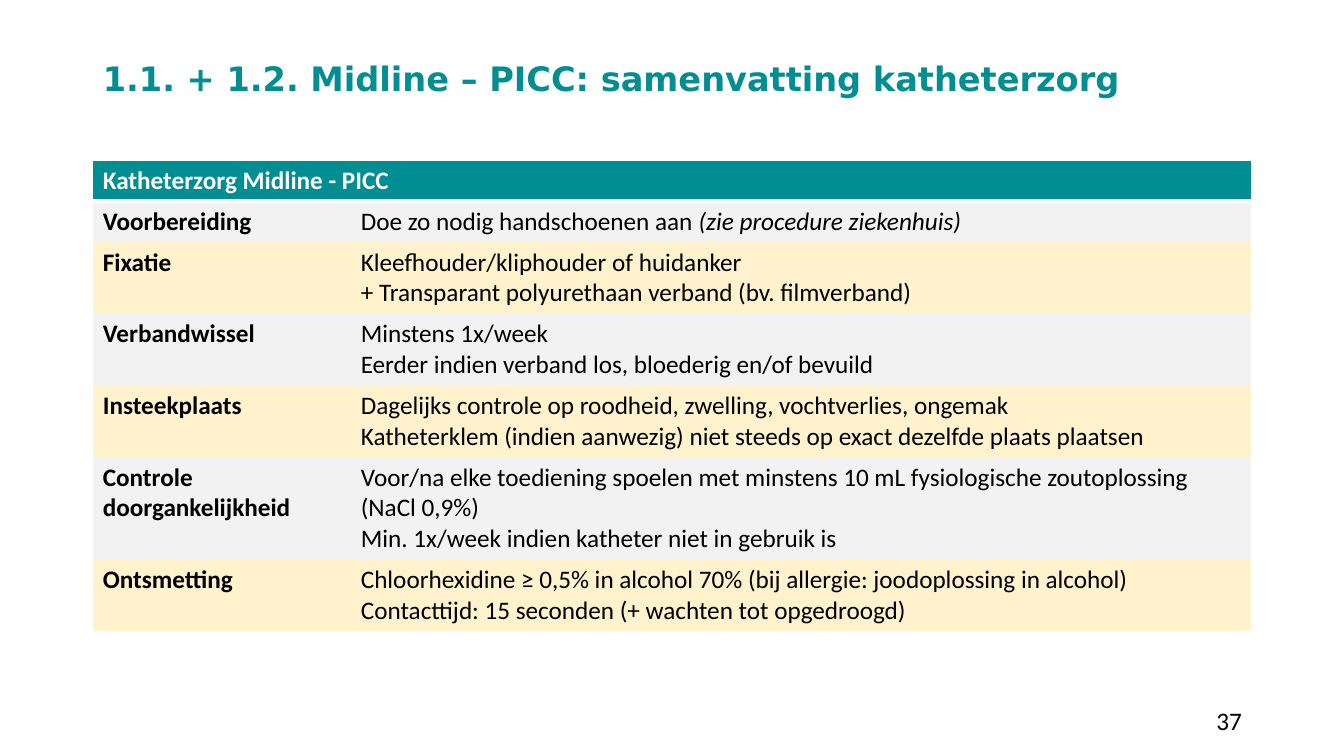
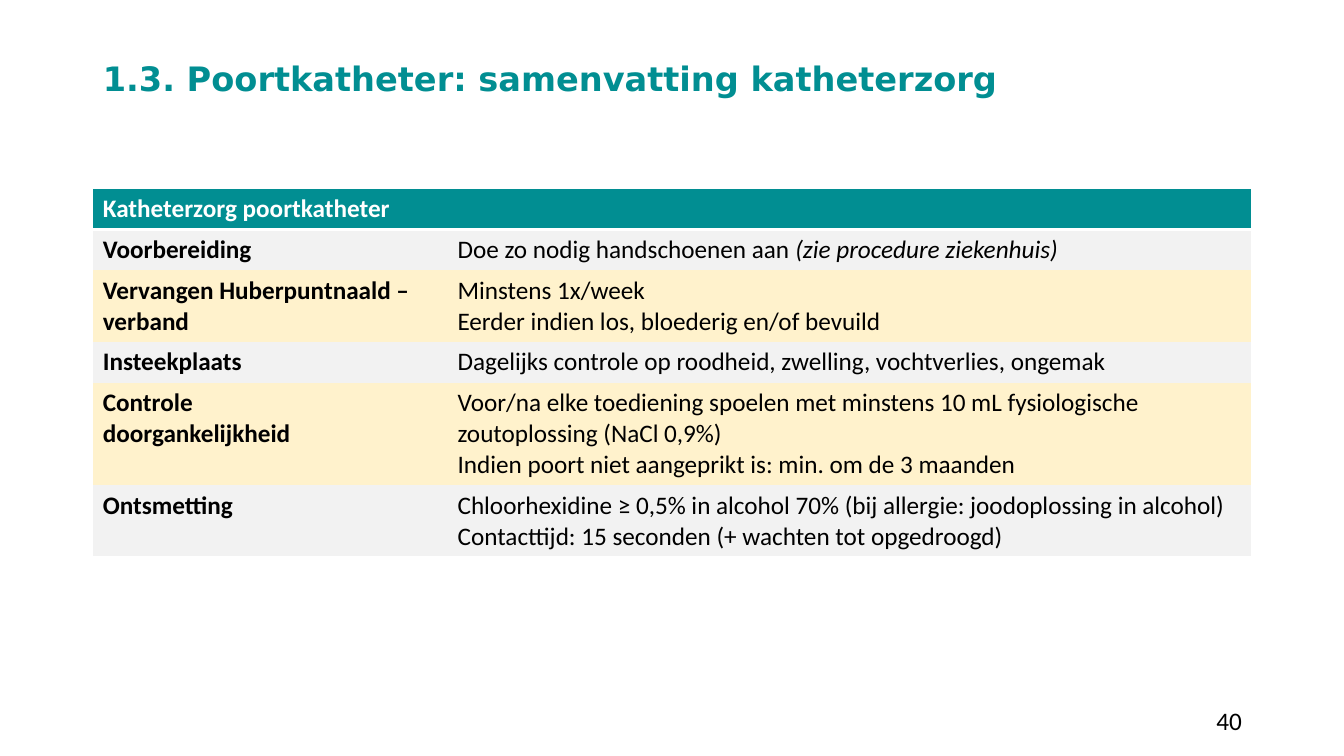
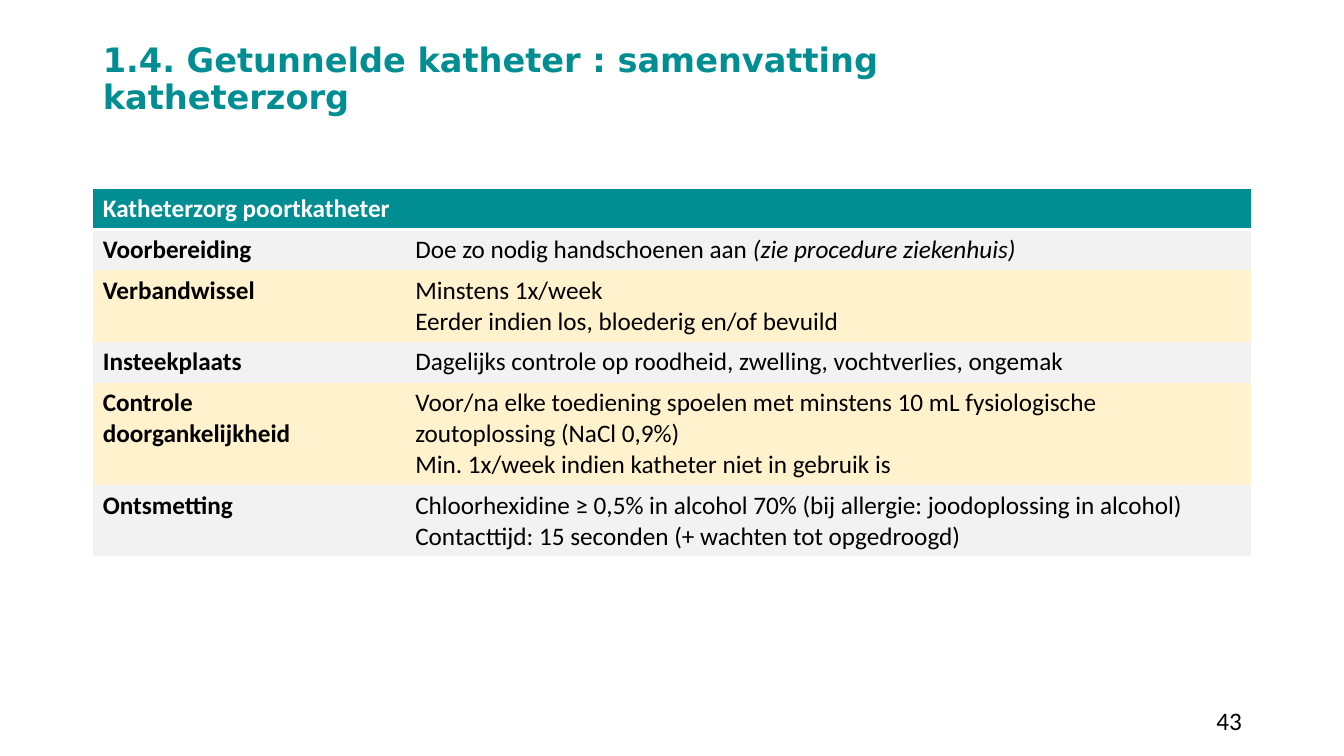
from dataclasses import dataclass
from typing import NamedTuple

from lxml.etree import SubElement
from pptx import Presentation
from pptx.dml.color import RGBColor
from pptx.enum.text import MSO_ANCHOR as Anchor, MSO_AUTO_SIZE as AutoSize, PP_ALIGN as Align
from pptx.oxml.ns import qn
from pptx.util import Pt


@dataclass(frozen=True)
class Theme:
    teal: str = "018E92"
    grey: str = "F2F2F2"
    cream: str = "FFF2CC"
    white: str = "FFFFFF"
    black: str = "000000"
    title_font: str = "DejaVu Sans"
    body_font: str = "Calibri"
    title_size: float = 24
    body_size: float = 18
    line_height: float = 22
    row_padding: float = 7.2
    thin_line: float = 1
    thick_line: float = 3
    left: float = 66.24
    table_width: float = 828
    plain_table: str = "{2D5ABB26-0587-4C30-8999-92F81FD0307C}"


THEME = Theme()


class Span(NamedTuple):
    text: str
    italic: bool = False


class CareRow(NamedTuple):
    label: tuple
    details: tuple
    lines: int = 1


FLUSH = "Voor/na elke toediening spoelen met minstens 10 mL fysiologische zoutoplossing (NaCl 0,9%)"
WEEKLY = "Min. 1x/week indien katheter niet in gebruik is"
INSPECTION = "Dagelijks controle op roodheid, zwelling, vochtverlies, ongemak"

PREPARATION = CareRow(
    ("Voorbereiding",),
    ((Span("Doe zo nodig handschoenen aan "), Span("(zie procedure ziekenhuis)", True)),),
)
DISINFECTION = CareRow(
    ("Ontsmetting",),
    (
        "Chloorhexidine ≥ 0,5% in alcohol 70% (bij allergie: joodoplossing in alcohol)",
        "Contacttijd: 15 seconden (+ wachten tot opgedroogd)",
    ),
    2,
)
INSERTION_SITE = CareRow(("Insteekplaats",), (INSPECTION,))


def dressing_change(label, early):
    return CareRow((label,), ("Minstens 1x/week", early), 2)


def patency_check(frequency):
    return CareRow(("Controle", "doorgankelijkheid"), (FLUSH, frequency), 3)


def add_text(para, text, font=THEME.body_font, size=THEME.body_size,
             color=THEME.black, bold=False, italic=False):
    span = para.add_run()
    span.text = text
    span.font.name = font
    span.font.size = Pt(size)
    span.font.color.rgb = RGBColor.from_string(color)
    span.font.bold = bold
    span.font.italic = italic


def add_title(page, text, width):
    title = page.shapes.title
    title.left, title.top = Pt(THEME.left), Pt(34.56)
    title.width, title.height = Pt(width), Pt(45.36)
    frame = title.text_frame
    frame.word_wrap = True
    frame.auto_size = AutoSize.NONE
    frame.vertical_anchor = Anchor.MIDDLE
    para = frame.paragraphs[0]
    para.alignment = Align.LEFT
    para.line_spacing = 0.9
    add_text(para, text, font=THEME.title_font, size=THEME.title_size,
             color=THEME.teal, bold=True)


def add_page_number(page, number):
    box = page.shapes.add_textbox(Pt(678.24), Pt(500.4), Pt(216), Pt(28.8))
    frame = box.text_frame
    frame.word_wrap = True
    frame.vertical_anchor = Anchor.MIDDLE
    para = frame.paragraphs[0]
    para.alignment = Align.RIGHT
    add_text(para, str(number))


def add_borders(cell, **widths):
    properties = cell._tc.get_or_add_tcPr()
    for side in "LRTB":
        if side in widths:
            line = SubElement(properties, qn(f"a:ln{side}"), w=str(Pt(widths[side])))
            fill = SubElement(line, qn("a:solidFill"))
            SubElement(fill, qn("a:srgbClr"), val=THEME.white)


def fill_cell(cell, paragraphs, fill, borders, **text_format):
    add_borders(cell, **borders)
    cell.fill.solid()
    cell.fill.fore_color.rgb = RGBColor.from_string(fill)
    frame = cell.text_frame
    for index, content in enumerate(paragraphs):
        para = frame.add_paragraph() if index else frame.paragraphs[0]
        spans = (Span(content),) if isinstance(content, str) else content
        for span in spans:
            add_text(para, span.text, italic=span.italic, **text_format)


def row_height(lines):
    return Pt(THEME.row_padding + lines * THEME.line_height)


def add_care_table(page, heading, top, label_width, care_rows):
    heights = [row_height(1)] + [row_height(row.lines) for row in care_rows]
    shape = page.shapes.add_table(len(heights), 2, Pt(THEME.left), Pt(top),
                                  Pt(THEME.table_width), sum(heights))
    shape._element.find(".//" + qn("a:tableStyleId")).text = THEME.plain_table
    table = shape.table
    table.columns[0].width = Pt(label_width)
    table.columns[1].width = Pt(THEME.table_width - label_width)
    for row, height in zip(table.rows, heights):
        row.height = height

    thin = THEME.thin_line
    table.cell(0, 0).merge(table.cell(0, 1))
    fill_cell(table.cell(0, 0), (heading,), THEME.teal,
              dict(L=thin, R=thin, T=thin, B=THEME.thick_line),
              color=THEME.white, bold=True)
    for index, row in enumerate(care_rows, start=1):
        fill = THEME.grey if index % 2 else THEME.cream
        bottom = {"B": thin} if index == len(care_rows) else {}
        fill_cell(table.cell(index, 0), row.label, fill, dict(L=thin, **bottom), bold=True)
        fill_cell(table.cell(index, 1), row.details, fill, dict(R=thin, **bottom))


def add_care_page(deck, title, number, heading, care_rows, label_width,
                  title_width=746.64, table_top=134.64):
    page = deck.slides.add_slide(deck.slide_layouts[5])
    add_title(page, title, title_width)
    add_page_number(page, number)
    add_care_table(page, heading, table_top, label_width, care_rows)


def main():
    deck = Presentation()
    deck.slide_width, deck.slide_height = Pt(960), Pt(540)

    add_care_page(
        deck, "1.1. + 1.2. Midline – PICC: samenvatting katheterzorg", 37,
        "Katheterzorg Midline - PICC",
        [
            PREPARATION,
            CareRow(("Fixatie",), (
                "Kleefhouder/kliphouder of huidanker",
                "+ Transparant polyurethaan verband (bv. filmverband)",
            ), 2),
            dressing_change("Verbandwissel",
                            "Eerder indien verband los, bloederig en/of bevuild"),
            CareRow(INSERTION_SITE.label, (
                INSPECTION,
                "Katheterklem (indien aanwezig) niet steeds op exact dezelfde plaats plaatsen",
            ), 2),
            patency_check(WEEKLY),
            DISINFECTION,
        ],
        label_width=184.32, title_width=792.72, table_top=114.48,
    )

    early = "Eerder indien los, bloederig en/of bevuild"
    add_care_page(
        deck, "1.3. Poortkatheter: samenvatting katheterzorg", 40,
        "Katheterzorg poortkatheter",
        [
            PREPARATION,
            dressing_change("Vervangen Huberpuntnaald – verband", early),
            INSERTION_SITE,
            patency_check("Indien poort niet aangeprikt is: min. om de 3 maanden"),
            DISINFECTION,
        ],
        label_width=253.44,
    )
    add_care_page(
        deck, "1.4. Getunnelde katheter : samenvatting katheterzorg", 43,
        "Katheterzorg poortkatheter",
        [
            PREPARATION,
            dressing_change("Verbandwissel", early),
            INSERTION_SITE,
            patency_check(WEEKLY),
            DISINFECTION,
        ],
        label_width=223.2,
    )
    deck.save("out.pptx")


if __name__ == "__main__":
    main()
